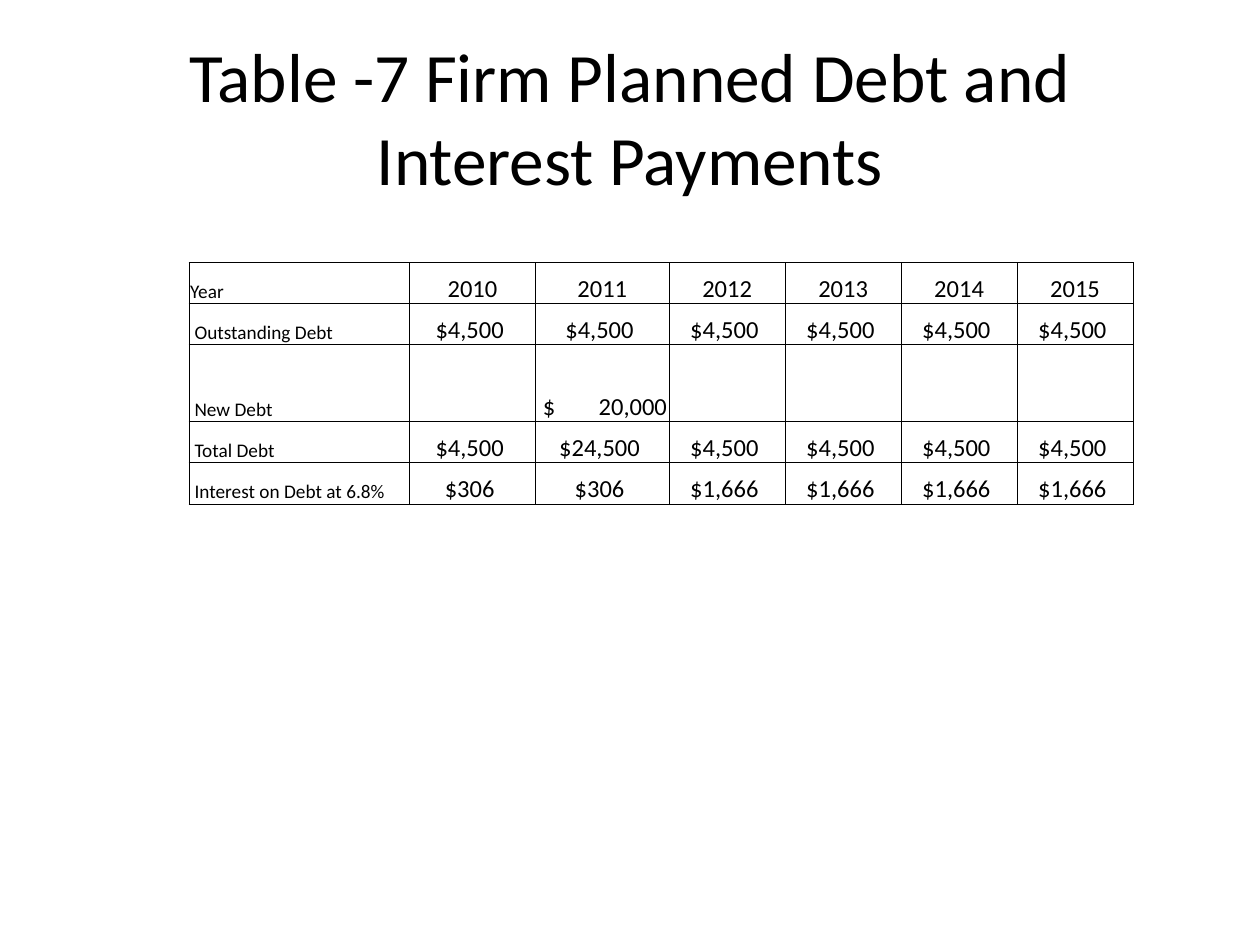
import lxml.etree
import pptx
import pptx.dml.color
import pptx.enum.text
import pptx.oxml.ns
import pptx.util

Pt = pptx.util.Pt
ALIGN = pptx.enum.text.PP_ALIGN
ANCHOR = pptx.enum.text.MSO_ANCHOR
BLACK = pptx.dml.color.RGBColor(0, 0, 0)
FONT = "Calibri"
TITLE = "Table -7 Firm Planned Debt and Interest Payments"
DEBT = "$4,500 "
INTEREST = "$1,666 "
ROWS = [
    ["Year"] + [str(year) for year in range(2010, 2016)],
    [" Outstanding Debt"] + [DEBT] * 6,
    [" New Debt", "", "$\t20,000", "", "", "", ""],
    [" Total Debt", DEBT, "$24,500 "] + [DEBT] * 4,
    [" Interest on Debt at 6.8%"] + ["$306 "] * 2 + [INTEREST] * 4,
]
COLUMN_WIDTHS = [126, 72, 76.4] + [66.3] * 4
ROW_HEIGHTS = [23.5, 23.5, 44, 23.5, 23.5]
CELL_FORMAT = {
    "vertical_anchor": ANCHOR.BOTTOM,
    "margin_left": Pt(0.7),
    "margin_right": Pt(0.7),
    "margin_top": Pt(0.7),
    "margin_bottom": Pt(0),
}


def apply_format(target, values):
    """Set every attribute named in values on the target."""
    for name, value in values.items():
        setattr(target, name, value)


def write_text(para, text, size, alignment):
    """Write one formatted span into a paragraph."""
    para.alignment = alignment
    span = para.add_run()
    span.text = text
    apply_format(span.font, {"name": FONT, "size": Pt(size), "bold": False})
    span.font.color.rgb = BLACK


def add_child(parent, tag, **attributes):
    """Append a drawing element with the given attributes."""
    return lxml.etree.SubElement(parent, pptx.oxml.ns.qn(tag), **attributes)


def add_borders(cell):
    """Draw a thin black line on each side of a cell."""
    properties = cell._tc.get_or_add_tcPr()
    for side in ("a:lnL", "a:lnR", "a:lnT", "a:lnB"):
        line = add_child(properties, side, w=str(Pt(0.5)))
        add_child(add_child(line, "a:solidFill"), "a:srgbClr", val=str(BLACK))


def add_right_tab(para, position):
    """Give a paragraph one right-aligned tab stop."""
    stops = add_child(para._p.get_or_add_pPr(), "a:tabLst")
    add_child(stops, "a:tab", pos=str(Pt(position)), algn="r")


def fill_cell(cell, text, is_label):
    """Format one table cell and write its text."""
    apply_format(cell, CELL_FORMAT)
    add_borders(cell)
    cell.fill.background()
    if not text:
        return
    para = cell.text_frame.paragraphs[0]
    if "\t" in text:
        cell.margin_left = Pt(4.2)
        write_text(para, text, 14, ALIGN.LEFT)
        add_right_tab(para, 71)
    elif is_label:
        write_text(para, text, 11, ALIGN.LEFT)
    else:
        write_text(para, text, 14, ALIGN.CENTER)


def add_title(page):
    """Place the slide title."""
    box = page.shapes.title
    apply_format(box, {"left": Pt(36), "top": Pt(21.6), "width": Pt(648), "height": Pt(90)})
    frame = box.text_frame
    apply_format(frame, {
        "vertical_anchor": ANCHOR.MIDDLE,
        "word_wrap": True,
        "auto_size": pptx.enum.text.MSO_AUTO_SIZE.NONE,
    })
    write_text(frame.paragraphs[0], TITLE, 39.6, ALIGN.CENTER)


def add_debt_table(page):
    """Build the table of debt and interest by year."""
    table = page.shapes.add_table(
        len(ROWS), len(COLUMN_WIDTHS), Pt(108), Pt(150),
        Pt(sum(COLUMN_WIDTHS)), Pt(sum(ROW_HEIGHTS)),
    ).table
    apply_format(table, {"first_row": False, "horz_banding": False})
    for column, width in zip(table.columns, COLUMN_WIDTHS):
        column.width = Pt(width)
    for row, height, texts in zip(table.rows, ROW_HEIGHTS, ROWS):
        row.height = Pt(height)
        for index, text in enumerate(texts):
            fill_cell(row.cells[index], text, index == 0)


def main():
    """Build and save the deck."""
    deck = pptx.Presentation()
    apply_format(deck, {"slide_width": Pt(720), "slide_height": Pt(540)})
    page = deck.slides.add_slide(deck.slide_layouts[5])
    add_title(page)
    add_debt_table(page)
    deck.save("out.pptx")


if __name__ == "__main__":
    main()
